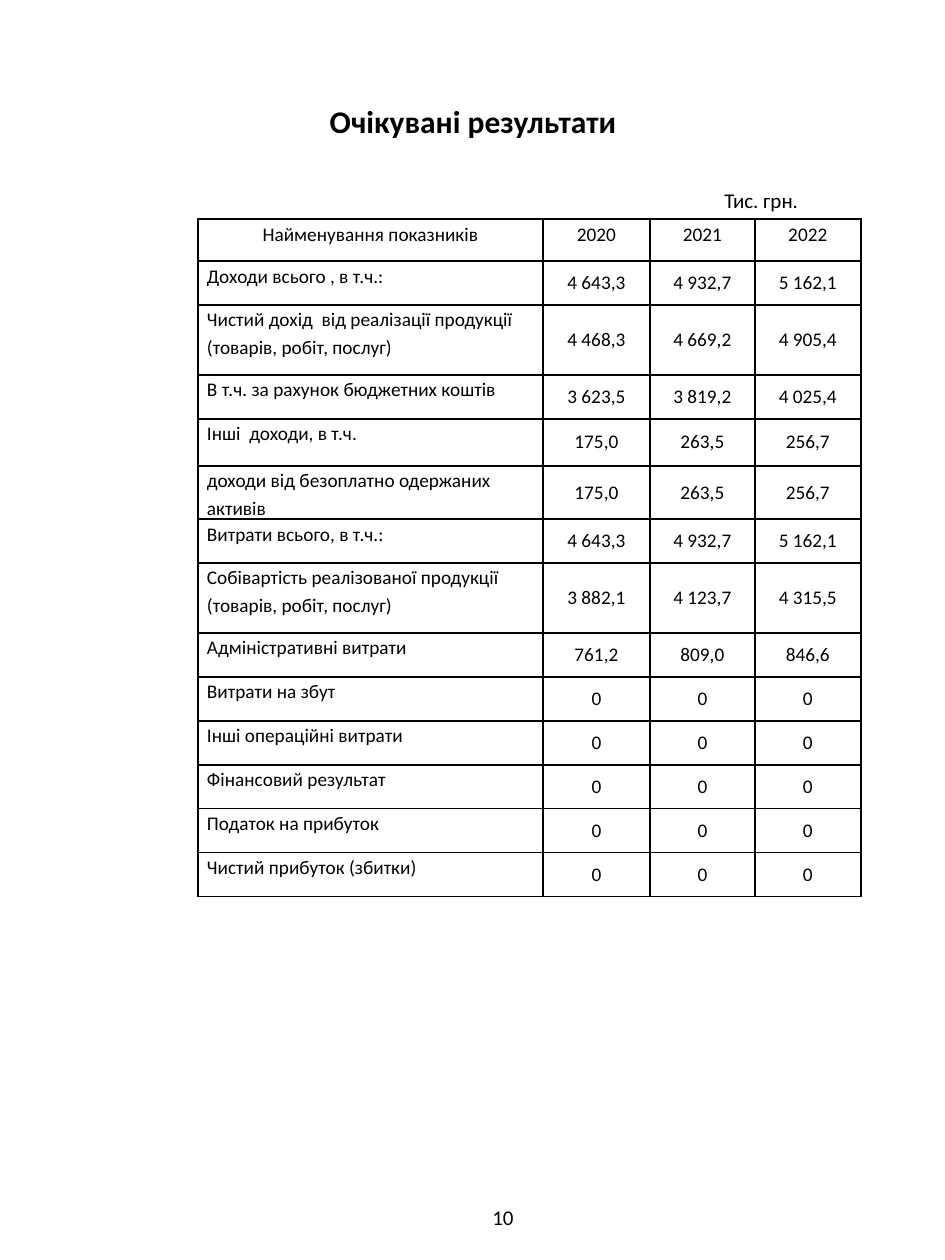
from lxml import etree
from pptx import Presentation
from pptx import util as u
from pptx.dml import color
from pptx.enum import text
from pptx.oxml import ns

COLORS = {"ink": "000000", "paper": "FFFFFF"}
HEADER = ("Найменування показників", "2020", "2021", "2022")
ZEROS = ("0", "0", "0")
INDICATORS = [
    ("Доходи всього , в т.ч.:", "4 643,3", "4 932,7", "5 162,1"),
    ("Чистий дохід  від реалізації продукції (товарів, робіт, послуг)", "4 468,3", "4 669,2", "4 905,4"),
    ("В т.ч. за рахунок бюджетних коштів", "3 623,5", "3 819,2", "4 025,4"),
    ("Інші  доходи, в т.ч.", "175,0", "263,5", "256,7"),
    ("доходи від безоплатно одержаних активів", "175,0", "263,5", "256,7"),
    ("Витрати всього, в т.ч.:", "4 643,3", "4 932,7", "5 162,1"),
    ("Собівартість реалізованої продукції (товарів, робіт, послуг)", "3 882,1", "4 123,7", "4 315,5"),
    ("Адміністративні витрати", "761,2", "809,0", "846,6"),
    ("Витрати на збут", *ZEROS),
    ("Інші операційні витрати", *ZEROS),
    ("Фінансовий результат", *ZEROS),
    ("Податок на прибуток", *ZEROS),
    ("Чистий прибуток (збитки)", *ZEROS),
]
COLUMN_WIDTHS = (345, 107, 105, 106)
ROW_HEIGHTS = (42, 44, 70, 44, 47, 44, 44, 70) + (44,) * 6


def px(length):
    return u.Emu(round(length * 914400 / 126))


def assign(target, values):
    for name, value in values.items():
        setattr(target, name, value)


class Sheet:
    font = "Calibri"

    def __init__(self, slide):
        self.slide = slide
        fill = slide.background.fill
        fill.solid()
        fill.fore_color.rgb = color.RGBColor.from_string(COLORS["paper"])

    def add_words(self, frame, words, size, bold=False, **layout):
        para = frame.paragraphs[0]
        assign(para, layout)
        span = para.add_run()
        span.text = words
        assign(span.font, {"name": self.font, "size": u.Pt(size), "bold": bold})
        span.font.color.rgb = color.RGBColor.from_string(COLORS["ink"])

    def text_box(self, place, words, size, anchor=text.MSO_ANCHOR.TOP, **style):
        box = self.slide.shapes.add_textbox(*map(px, place))
        assign(box.text_frame, {"word_wrap": True, "vertical_anchor": anchor})
        self.add_words(box.text_frame, words, size, **style)

    def border(self, cell):
        properties = cell._tc.get_or_add_tcPr()
        for position, side in enumerate(("lnL", "lnR", "lnT", "lnB")):
            line = etree.Element(ns.qn("a:" + side), w=str(u.Pt(1)))
            fill = etree.SubElement(line, ns.qn("a:solidFill"))
            etree.SubElement(fill, ns.qn("a:srgbClr"), val=COLORS["ink"])
            properties.insert(position, line)

    def table(self, left, top, rows, widths, heights):
        place = map(px, (left, top, sum(widths), sum(heights)))
        grid = self.slide.shapes.add_table(len(rows), len(widths), *place).table
        assign(grid, {"first_row": False, "horz_banding": False})
        for column, width in zip(grid.columns, widths):
            column.width = px(width)
        for row, height in zip(grid.rows, heights):
            row.height = px(height)
        for r, row in enumerate(rows):
            for c, words in enumerate(row):
                cell = grid.cell(r, c)
                is_value = r > 0 and c > 0
                is_label = r > 0 and c == 0
                assign(cell, {
                    "margin_left": px(9), "margin_right": px(9),
                    "margin_top": 0, "margin_bottom": 0,
                    "vertical_anchor": text.MSO_ANCHOR.MIDDLE if is_value else text.MSO_ANCHOR.TOP,
                })
                cell.fill.background()
                self.border(cell)
                self.add_words(cell.text_frame, words, 11,
                               alignment=text.PP_ALIGN.LEFT if is_label else text.PP_ALIGN.CENTER,
                               line_spacing=1.0 if is_value else 1.15)


def main():
    deck = Presentation()
    assign(deck, {"slide_width": px(945), "slide_height": px(1260)})
    page = Sheet(deck.slides.add_slide(deck.slide_layouts[6]))
    page.text_box((48, 50, 850, 141), "Очікувані результати", 18, text.MSO_ANCHOR.MIDDLE,
                  bold=True, alignment=text.PP_ALIGN.CENTER)
    page.table(198, 219, [HEADER, *INDICATORS], COLUMN_WIDTHS, ROW_HEIGHTS)
    page.text_box((712, 181, 111, 38), "Тис. грн.", 12)
    page.text_box((480, 1198, 64, 38), "10", 12)
    deck.save("out.pptx")


if __name__ == "__main__":
    main()
